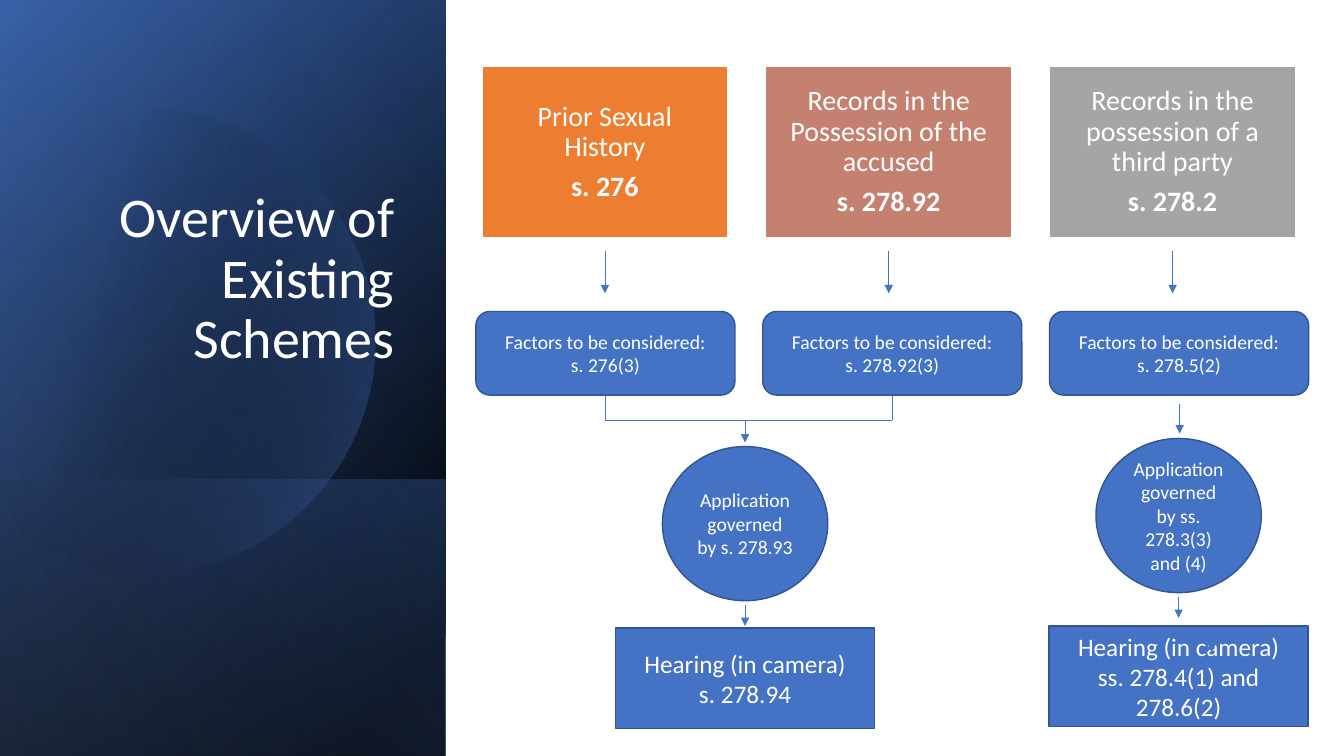
from math import acos, cos, sin

from lxml.etree import SubElement
from pptx import Presentation
from pptx.dml.color import RGBColor
from pptx.enum.shapes import MSO_CONNECTOR, MSO_SHAPE
from pptx.enum.text import MSO_ANCHOR, PP_ALIGN
from pptx.oxml import parse_xml
from pptx.oxml.ns import nsdecls, qn
from pptx.util import Inches, Pt

WHITE = RGBColor(0xFF, 0xFF, 0xFF)
BLACK = RGBColor(0, 0, 0)
BLUE = RGBColor(0x44, 0x72, 0xC4)
DEEP_BLUE = RGBColor(0x2F, 0x55, 0x97)
PALE_BLUE = RGBColor(0x8F, 0xAA, 0xDC)
OUTLINE = RGBColor(0x32, 0x54, 0x91)
ORANGE = RGBColor(0xED, 0x7D, 0x31)
ROSE = RGBColor(0xC4, 0x81, 0x70)
GRAY = RGBColor(0xA5, 0xA5, 0xA5)
FONT = "Calibri"

TITLE = "Overview of Existing Schemes"
SCHEMES = [
    ("Prior Sexual History", "s. 276", ORANGE, "s. 276(3)"),
    ("Records in the Possession of the accused", "s. 278.92", ROSE, "s. 278.92(3)"),
    ("Records in the possession of a third party", "s. 278.2", GRAY, "s. 278.5(2)"),
]
FACTORS = "Factors to be considered:"
# (column centre, circle top, application, hearing top, hearing lines)
PROCEDURES = [
    (7.39, 4.43, "Application governed by s. 278.93", 6.23,
     ["Hearing (in camera)", "s. 278.94"]),
    (11.69, 4.35, "Application governed by ss. 278.3(3) and (4)", 6.21,
     ["Hearing (in camera)", "ss. 278.4(1) and 278.6(2)"]),
]

SLIDE_W, SLIDE_H = 13.33, 7.5
PANEL_W = 4.42
SHADE_H = 2.74
HEADER_X, HEADER_PITCH, HEADER_Y = 4.78, 2.815, 0.66
HEADER_W, HEADER_H = 2.44, 1.7
FACTOR_X, FACTOR_PITCH, FACTOR_Y = 4.72, 2.845, 3.09
BOX_W, FACTOR_H, HEARING_H = 2.57, 0.83, 1
CIRCLE_W, CIRCLE_H = 1.64, 1.53
BRACKET_Y = 4.17

# Panel layers: height, gradient angle, (position %, colour, opacity %)
BASE_LAYERS = [
    (SLIDE_H, 50, [(8, BLACK, 100), (100, DEEP_BLUE, 100)]),
    (SLIDE_H, 30, [(0, BLACK, 0), (99, BLUE, 46)]),
    (SHADE_H, 130, [(2, BLUE, 29), (100, BLACK, 30)]),
]
TOP_LAYER = (SLIDE_H, 120, [(0, BLACK, 0), (99, PALE_BLUE, 11)])
DISC_STOPS = [(29, BLACK, 0), (100, BLUE, 43)]
DISC_X, DISC_Y, DISC_R, DISC_STEPS = 1.41, 3.38, 2.31, 120

deck = Presentation()
deck.slide_width, deck.slide_height = Inches(SLIDE_W), Inches(SLIDE_H)
slide = deck.slides.add_slide(deck.slide_layouts[6])
shapes = slide.shapes


def fill_gradient(shape, angle, stops):
    """Give the shape a linear gradient with semi-transparent stops and no line."""
    stops_xml = "".join(
        f'<a:gs pos="{pos * 1000}"><a:srgbClr val="{colour}">'
        f'<a:alpha val="{opacity * 1000}"/></a:srgbClr></a:gs>'
        for pos, colour, opacity in stops)
    gradient = parse_xml(
        f'<a:gradFill {nsdecls("a")} rotWithShape="1"><a:gsLst>{stops_xml}</a:gsLst>'
        f'<a:lin ang="{angle * 60000}" scaled="0"/></a:gradFill>')
    shape.shadow.inherit = False
    shape.line.fill.background()
    properties = shape._element.spPr
    geometry = [part for part in properties
                if part.tag in (qn("a:prstGeom"), qn("a:custGeom"))][0]
    geometry.addnext(gradient)


def add_panel_layer(height, angle, stops):
    """Cover the bottom part of the panel with a mirrored, quarter-turned rectangle."""
    middle = SLIDE_H - height / 2
    layer = shapes.add_shape(
        MSO_SHAPE.RECTANGLE, Inches((PANEL_W - height) / 2),
        Inches(middle - PANEL_W / 2), Inches(height), Inches(PANEL_W))
    layer.rotation = 90
    layer._element.spPr.find(qn("a:xfrm")).set("flipH", "1")
    fill_gradient(layer, angle, stops)


def add_disc():
    """Draw the circle that the slide's left edge cuts off."""
    reach = acos(-DISC_X / DISC_R)
    angles = [reach * (2 * step / DISC_STEPS - 1) for step in range(DISC_STEPS + 1)]
    rim = [(Inches(DISC_X + DISC_R * cos(a)), Inches(DISC_Y + DISC_R * sin(a)))
           for a in angles]
    outline = shapes.build_freeform(*rim[0])
    outline.add_line_segments(rim[1:], close=True)
    fill_gradient(outline.convert_to_shape(), 14, DISC_STOPS)


def write(frame, lines, size, align=PP_ALIGN.CENTER, bold_last=False,
          spacing=None, after=None):
    frame.word_wrap = True
    for index, line in enumerate(lines):
        paragraph = frame.add_paragraph() if index else frame.paragraphs[0]
        paragraph.alignment = align
        paragraph.line_spacing = spacing
        paragraph.space_after = after
        run = paragraph.add_run()
        run.text = line
        run.font.name, run.font.size = FONT, Pt(size)
        run.font.color.rgb = WHITE
        run.font.bold = bold_last and index == len(lines) - 1


def add_box(kind, left, top, width, height, fill=BLUE, line=OUTLINE):
    box = shapes.add_shape(kind, Inches(left), Inches(top), Inches(width), Inches(height))
    box.shadow.inherit = False
    box.fill.solid()
    box.fill.fore_color.rgb = fill
    box.line.color.rgb = line
    box.line.width = Pt(1)
    box.text_frame.vertical_anchor = MSO_ANCHOR.MIDDLE
    return box


def add_line(x1, y1, x2, y2, arrow=True):
    line = shapes.add_connector(
        MSO_CONNECTOR.STRAIGHT, Inches(x1), Inches(y1), Inches(x2), Inches(y2))
    line.line.color.rgb = BLUE
    line.line.width = Pt(0.5)
    if arrow:
        SubElement(line.line._get_or_add_ln(), qn("a:tailEnd"), type="triangle")
    SubElement(line._element.spPr, qn("a:effectLst"))
    return line


for layer in BASE_LAYERS:
    add_panel_layer(*layer)
add_disc()
add_panel_layer(*TOP_LAYER)

title = shapes.add_textbox(Inches(0.51), Inches(0.64), Inches(3.5), Inches(3.09)).text_frame
title.vertical_anchor = MSO_ANCHOR.BOTTOM
write(title, [TITLE], 40, PP_ALIGN.RIGHT, spacing=0.9)

factor_boxes = []
for column, (scheme, section, colour, factor_section) in enumerate(SCHEMES):
    header_x = HEADER_X + column * HEADER_PITCH
    header = add_box(MSO_SHAPE.RECTANGLE, header_x, HEADER_Y, HEADER_W, HEADER_H,
                     colour, WHITE)
    header.text_frame.margin_left = header.text_frame.margin_right = Inches(0.2)
    write(header.text_frame, [scheme, section], 20, bold_last=True,
          spacing=0.9, after=Pt(7))
    header_middle = header_x + HEADER_W / 2
    add_line(header_middle, 2.49, header_middle, 2.91)
    factors = add_box(MSO_SHAPE.ROUNDED_RECTANGLE, FACTOR_X + column * FACTOR_PITCH,
                      FACTOR_Y, BOX_W, FACTOR_H)
    write(factors.text_frame, [FACTORS, factor_section], 14)
    factor_boxes.append(factors)

for middle, circle_y, application, hearing_y, hearing_lines in PROCEDURES:
    circle = add_box(MSO_SHAPE.OVAL, middle - CIRCLE_W / 2, circle_y, CIRCLE_W, CIRCLE_H)
    write(circle.text_frame, [application], 14)
    hearing = add_box(MSO_SHAPE.RECTANGLE, middle - BOX_W / 2, hearing_y, BOX_W, HEARING_H)
    write(hearing.text_frame, hearing_lines, 18)
    circle_bottom = circle_y + CIRCLE_H
    add_line(middle, circle_bottom + 0.04, middle, circle_bottom + 0.25)

joined_middles = [FACTOR_X + column * FACTOR_PITCH + BOX_W / 2 for column in range(2)]
for factors, middle in zip(factor_boxes, joined_middles):
    drop = add_line(middle, FACTOR_Y + FACTOR_H, middle, BRACKET_Y, arrow=False)
    drop.begin_connect(factors, 2)
add_line(joined_middles[0], BRACKET_Y, joined_middles[1], BRACKET_Y, arrow=False)
add_line(PROCEDURES[0][0], BRACKET_Y, PROCEDURES[0][0], 4.39)
add_line(11.7, 4.01, 11.7, 4.3)
add_line(12.02, 6.25, 12.02, 6.47)

deck.save("out.pptx")
